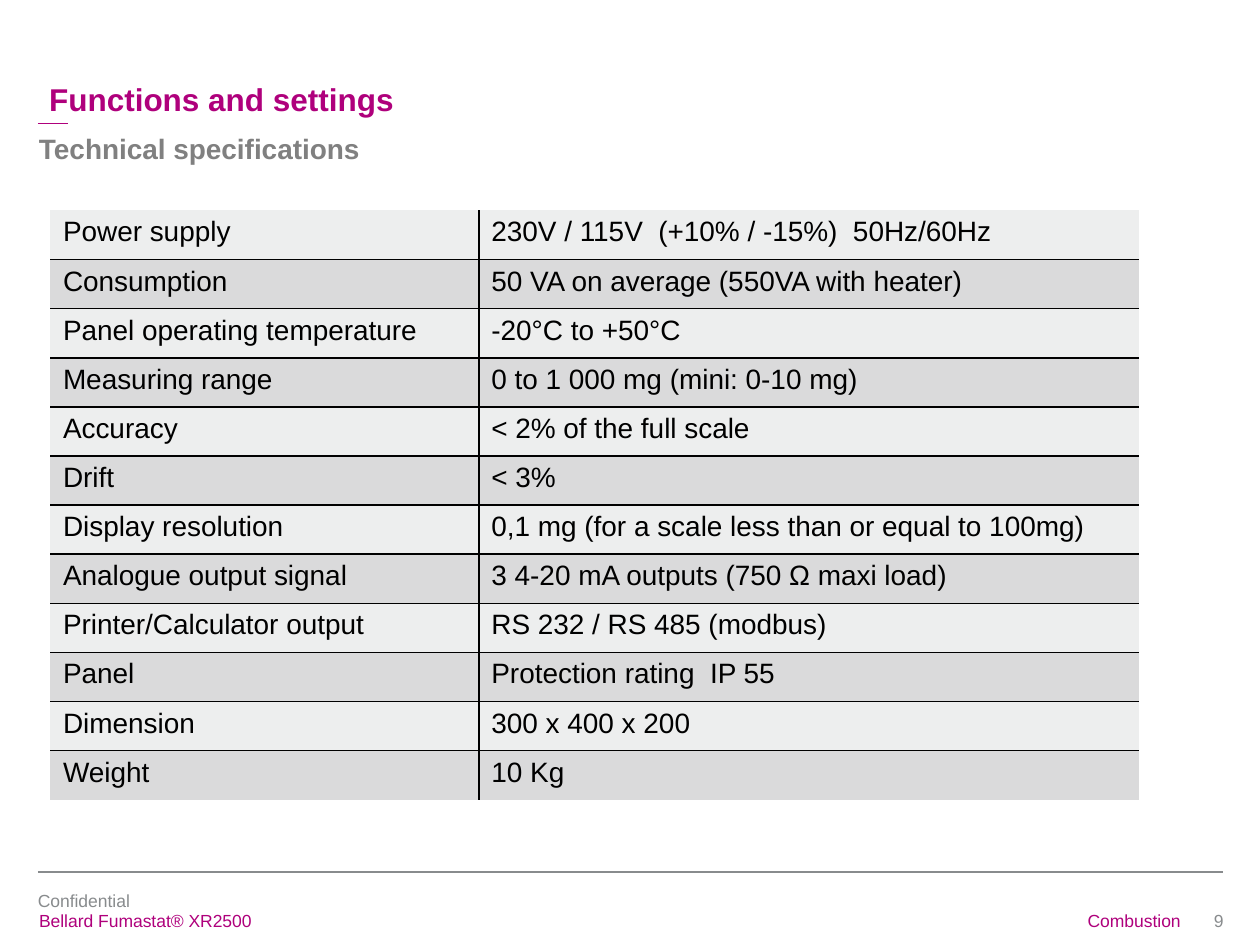
from lxml.etree import SubElement
from pptx import Presentation
from pptx.dml.color import RGBColor
from pptx.enum.shapes import MSO_CONNECTOR as CONNECTOR
from pptx.enum.text import MSO_ANCHOR as ANCHOR, PP_ALIGN as ALIGN
from pptx.oxml.ns import qn
from pptx.util import Inches, Pt

COLORS = {
    "magenta": "AF007C",
    "footer": "888B8D",
    "subtitle": "808080",
    "text": "000000",
    "light": "EDEEEE",
    "dark": "DADADB",
}
SPECIFICATIONS = [
    ("Power supply", "230V / 115V  (+10% / -15%)  50Hz/60Hz"),
    ("Consumption", "50 VA on average (550VA with heater)"),
    ("Panel operating temperature", "-20°C to +50°C"),
    ("Measuring range", "0 to 1 000 mg (mini: 0-10 mg)"),
    ("Accuracy", "< 2% of the full scale"),
    ("Drift", "< 3%"),
    ("Display resolution", "0,1 mg (for a scale less than or equal to 100mg)"),
    ("Analogue output signal", "3 4-20 mA outputs (750 Ω maxi load)"),
    ("Printer/Calculator output", "RS 232 / RS 485 (modbus)"),
    ("Panel", "Protection rating  IP 55"),
    ("Dimension", "300 x 400 x 200"),
    ("Weight", "10 Kg"),
]
COLUMN_WIDTHS = (3.4, 5.24)
ROW_HEIGHT = 0.39
NO_STYLE = "{2D5ABB26-0587-4C30-8999-92F81FD0307C}"


def rgb(name):
    return RGBColor.from_string(COLORS[name])


def add_run(paragraph, text, size, color, bold=False):
    run = paragraph.add_run()
    run.text = text
    run.font.name = "Arial"
    run.font.size = Pt(size)
    run.font.bold = bold
    run.font.color.rgb = rgb(color)


def fill_frame(frame, text, size, color, bold=False, align=ALIGN.LEFT,
               anchor=ANCHOR.TOP, spacing=1.0):
    """Write one paragraph into a frame without margins."""
    frame.word_wrap = True
    frame.vertical_anchor = anchor
    frame.margin_left = frame.margin_right = 0
    frame.margin_top = frame.margin_bottom = 0
    paragraph = frame.paragraphs[0]
    paragraph.alignment = align
    paragraph.line_spacing = spacing
    add_run(paragraph, text, size, color, bold)


def add_title(slide, text):
    title = slide.shapes.title
    title.left, title.top = Inches(0.39), Inches(0.31)
    title.width, title.height = Inches(7.81), Inches(0.63)
    fill_frame(title.text_frame, text, 18, "magenta", bold=True,
               anchor=ANCHOR.BOTTOM, spacing=0.95)


def add_text(slide, box, text, size, color, **style):
    label = slide.shapes.add_textbox(*map(Inches, box))
    fill_frame(label.text_frame, text, size, color, **style)


def add_rule(slide, left, right, y, color):
    rule = slide.shapes.add_connector(
        CONNECTOR.STRAIGHT, Inches(left), Inches(y), Inches(right), Inches(y))
    rule.line.color.rgb = rgb(color)
    rule.line.width = Pt(1)
    SubElement(rule._element.spPr, qn("a:effectLst"))


def add_borders(cell, sides):
    """Draw 1 pt borders on the given sides; call before filling the cell."""
    properties = cell._tc.get_or_add_tcPr()
    for side in sides:
        line = SubElement(properties, qn(f"a:ln{side}"), w=str(Pt(1)))
        solid = SubElement(line, qn("a:solidFill"))
        SubElement(solid, qn("a:srgbClr"), val=COLORS["text"])


def add_specifications(slide):
    rows, columns = len(SPECIFICATIONS), len(COLUMN_WIDTHS)
    frame = slide.shapes.add_table(
        rows, columns, Inches(0.4), Inches(1.67),
        Inches(sum(COLUMN_WIDTHS)), Inches(rows * ROW_HEIGHT))
    table = frame.table
    table.first_row = table.horz_banding = False
    table._tbl.tblPr.find(qn("a:tableStyleId")).text = NO_STYLE
    for column, width in zip(table.columns, COLUMN_WIDTHS):
        column.width = Inches(width)
    for r, texts in enumerate(SPECIFICATIONS):
        table.rows[r].height = Inches(ROW_HEIGHT)
        for c, text in enumerate(texts):
            cell = table.cell(r, c)
            inner = {"L": c > 0, "R": c < columns - 1,
                     "T": r > 0, "B": r < rows - 1}
            add_borders(cell, [side for side, drawn in inner.items() if drawn])
            cell.fill.solid()
            cell.fill.fore_color.rgb = rgb("dark" if r % 2 else "light")
            add_run(cell.text_frame.paragraphs[0], text, 16, "text")


def main():
    deck = Presentation()
    deck.slide_width, deck.slide_height = Inches(10), Inches(7.5)
    slide = deck.slides.add_slide(deck.slide_layouts[5])

    add_title(slide, "Functions and settings")
    add_rule(slide, 0.3, 0.54, 0.98, "magenta")
    add_text(slide, (0.31, 1.03, 7.83, 0.41), "Technical specifications",
             16, "subtitle", bold=True, spacing=1.05)
    add_specifications(slide)

    add_rule(slide, 0.3, 9.71, 6.92, "footer")
    add_text(slide, (0.3, 7.06, 2.98, 0.17), "Confidential", 10, "footer")
    add_text(slide, (0.31, 7.22, 4.38, 0.2), "Bellard Fumastat® XR2500",
             10, "magenta")
    add_text(slide, (7.3, 7.22, 2.07, 0.17), "Combustion", 10, "magenta",
             align=ALIGN.RIGHT)
    add_text(slide, (9.41, 7.22, 0.3, 0.2), "9", 10, "footer",
             align=ALIGN.RIGHT)
    deck.save("out.pptx")


if __name__ == "__main__":
    main()
